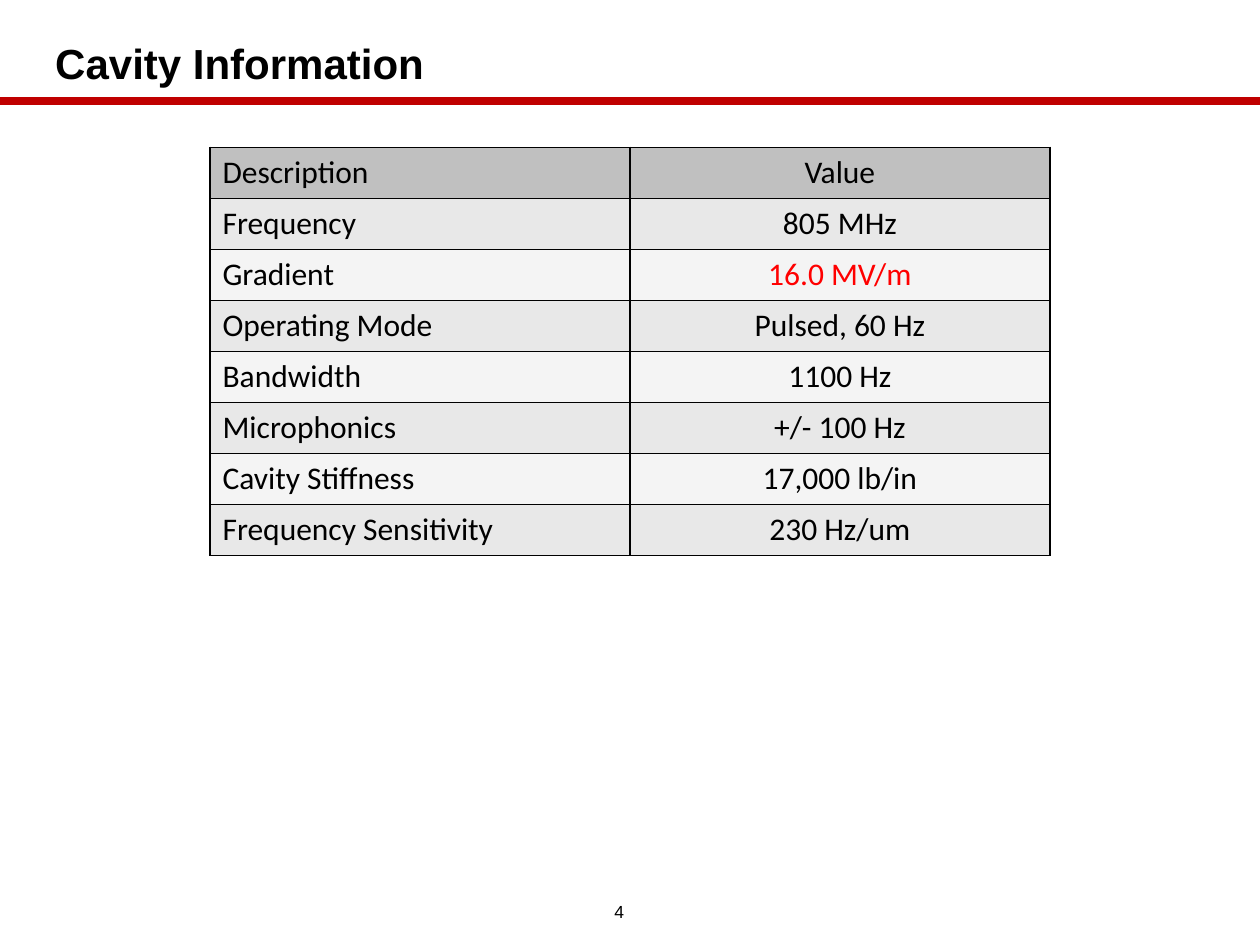
from lxml.etree import SubElement
from pptx import Presentation
from pptx.dml.color import RGBColor
from pptx.enum.shapes import MSO_CONNECTOR
from pptx.enum.text import MSO_ANCHOR, PP_ALIGN
from pptx.oxml.ns import qn
from pptx.util import Inches, Pt

TITLE = "Cavity Information"
PAGE_NUMBER = "4"
ROWS = [
    ("Description", "Value"),
    ("Frequency", "805 MHz"),
    ("Gradient", "16.0 MV/m"),
    ("Operating Mode", "Pulsed, 60 Hz"),
    ("Bandwidth", "1100 Hz"),
    ("Microphonics", "+/- 100 Hz"),
    ("Cavity Stiffness", "17,000 lb/in"),
    ("Frequency Sensitivity", "230 Hz/um"),
]
HIGHLIGHTED = "16.0 MV/m"
COLUMN_ALIGNMENTS = (PP_ALIGN.LEFT, PP_ALIGN.CENTER)
COLORS = {
    "text": "000000", "highlight": "FF0000", "rule": "C00000", "border": "000000",
    "header": "C0C0C0", "odd": "E8E8E8", "even": "F4F4F4",
}
SLIDE_WIDTH, SLIDE_HEIGHT = 10, 7.5
TABLE_WIDTH, TABLE_TOP, ROW_HEIGHT = SLIDE_WIDTH * 2 / 3, 1.17, 0.405


def rgb(name):
    return RGBColor.from_string(COLORS[name])


def write(frame, text, size=18, font="Calibri", color="text", bold=False,
          align=PP_ALIGN.LEFT, line_spacing=None):
    paragraph = frame.paragraphs[0]
    paragraph.alignment = align
    paragraph.line_spacing = line_spacing
    run = paragraph.add_run()
    run.text = text
    run.font.size = Pt(size)
    run.font.name = font
    run.font.bold = bold
    run.font.color.rgb = rgb(color)


def add_label(slide, box, text, **text_format):
    frame = slide.shapes.add_textbox(*map(Inches, box)).text_frame
    frame.word_wrap = True
    frame.vertical_anchor = MSO_ANCHOR.MIDDLE
    write(frame, text, **text_format)


def add_rule(slide, y):
    rule = slide.shapes.add_connector(
        MSO_CONNECTOR.STRAIGHT, 0, Inches(y), Inches(SLIDE_WIDTH), Inches(y))
    rule.line.color.rgb = rgb("rule")
    rule.line.width = Pt(4.5)
    SubElement(rule.element.spPr, qn("a:effectLst"))


def add_borders(cell):
    """Outline all four sides; borders must precede the fill in the cell XML."""
    properties = cell._tc.get_or_add_tcPr()
    for side in ("a:lnL", "a:lnR", "a:lnT", "a:lnB"):
        line = SubElement(properties, qn(side), w=str(Pt(1)))
        fill = SubElement(line, qn("a:solidFill"))
        SubElement(fill, qn("a:srgbClr"), val=COLORS["border"])


def add_cavity_table(slide):
    left = (SLIDE_WIDTH - TABLE_WIDTH) / 2
    box = (left, TABLE_TOP, TABLE_WIDTH, ROW_HEIGHT * len(ROWS))
    table = slide.shapes.add_table(
        len(ROWS), len(COLUMN_ALIGNMENTS), *map(Inches, box)).table
    for r, row in enumerate(ROWS):
        shade = "header" if r == 0 else "odd" if r % 2 else "even"
        for c, text in enumerate(row):
            cell = table.cell(r, c)
            add_borders(cell)
            cell.fill.solid()
            cell.fill.fore_color.rgb = rgb(shade)
            write(cell.text_frame, text, align=COLUMN_ALIGNMENTS[c],
                  color="highlight" if text == HIGHLIGHTED else "text")


def main():
    presentation = Presentation()
    presentation.slide_width = Inches(SLIDE_WIDTH)
    presentation.slide_height = Inches(SLIDE_HEIGHT)
    slide = presentation.slides.add_slide(presentation.slide_layouts[6])
    add_rule(slide, 0.8)
    add_label(slide, (0.34, 0.26, 9.26, 0.53), TITLE,
              size=24, font="Arial", bold=True, line_spacing=0.9)
    add_label(slide, (4.62, 7.07, 0.59, 0.33), PAGE_NUMBER,
              size=10, font="Arial", align=PP_ALIGN.CENTER)
    add_cavity_table(slide)
    presentation.save("out.pptx")


if __name__ == "__main__":
    main()
